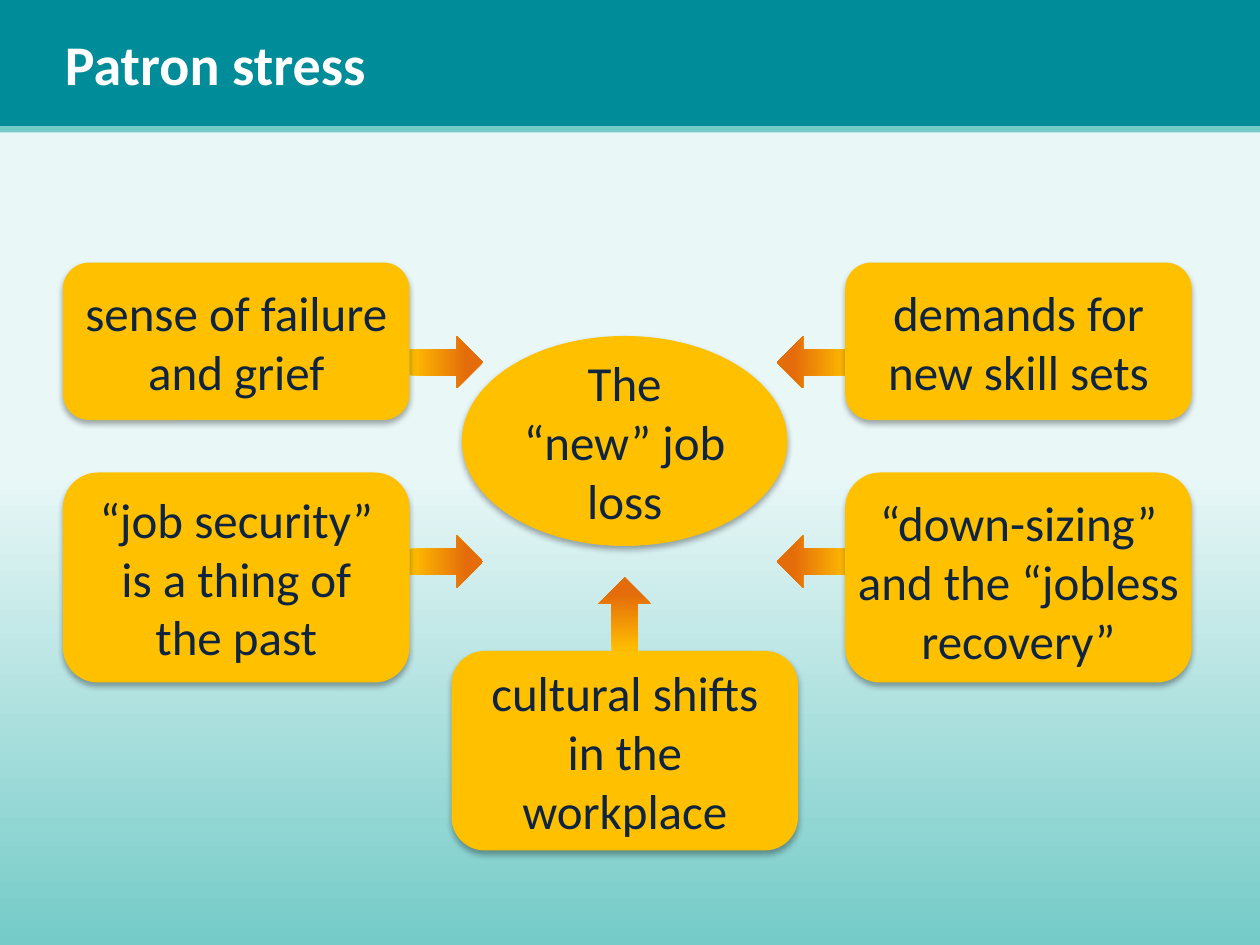
import pptx
import pptx.util
import pptx.dml.color
import pptx.enum.shapes
import pptx.enum.text
import pptx.oxml
import pptx.oxml.ns
from dataclasses import dataclass

PX = 7620  # EMU in one px, 120 px to the inch
SHAPES = pptx.enum.shapes.MSO_SHAPE
ALIGN = pptx.enum.text.PP_ALIGN


@dataclass(frozen=True)
class Theme:
    font: str = "Calibri"
    title_size: int = 32
    body_size: int = 28
    header: str = "008C99"
    accent: str = "74CBC8"
    pale: str = "E9F7F7"
    card: str = "FFC000"
    arrow_tip: str = "E46C0A"
    ink: str = "0F243E"
    white: str = "FFFFFF"


THEME = Theme()
DEFAULT_INSETS = (12, 6, 12, 6)


def rgb(color):
    return pptx.dml.color.RGBColor.from_string(color)


def set_gradient(fill, stops, angle):
    fill.gradient()
    fill.gradient_angle = angle
    for stop, (position, color) in zip(fill.gradient_stops, stops):
        stop.position = position
        stop.color.rgb = rgb(color)


def add_block(slide, kind, box, color=None):
    block = slide.shapes.add_shape(kind, *(length * PX for length in box))
    block.shadow.inherit = False
    block.line.fill.background()
    if color:
        block.fill.solid()
        block.fill.fore_color.rgb = rgb(color)
    return block


def add_soft_shadow(block):
    effects = block._element.spPr.find(pptx.oxml.ns.qn("a:effectLst"))
    effects.append(pptx.oxml.parse_xml(
        f'<a:outerShdw {pptx.oxml.ns.nsdecls("a")} blurRad="44450" dist="27940" '
        'dir="5400000" rotWithShape="0"><a:srgbClr val="000000">'
        '<a:alpha val="32000"/></a:srgbClr></a:outerShdw>'))


def write(shape, text, size=THEME.body_size, color=THEME.ink, bold=False,
          align=ALIGN.CENTER, insets=DEFAULT_INSETS):
    frame = shape.text_frame
    frame.word_wrap = True
    frame.vertical_anchor = pptx.enum.text.MSO_ANCHOR.MIDDLE
    (frame.margin_left, frame.margin_top,
     frame.margin_right, frame.margin_bottom) = (inset * PX for inset in insets)
    paragraph = frame.paragraphs[0]
    paragraph.alignment = align
    run = paragraph.add_run()
    run.text = text
    run.font.name = THEME.font
    run.font.size = pptx.util.Pt(size)
    run.font.bold = bold
    run.font.color.rgb = rgb(color)


def add_header(slide, box, title):
    left, top, width, height = box
    add_block(slide, SHAPES.RECTANGLE, box, THEME.header)
    add_block(slide, SHAPES.RECTANGLE, (left, top + height, width, 6), THEME.accent)
    heading = slide.shapes.add_textbox(
        *(length * PX for length in (left + 50, top + 10, 1080, height - 20)))
    write(heading, title, size=THEME.title_size, color=THEME.white,
          bold=True, align=ALIGN.LEFT)


def add_arrow(slide, left, top, rotation=0, flipped=False):
    arrow = add_block(slide, SHAPES.RIGHT_ARROW, (left, top, 70, 50))
    set_gradient(arrow.fill, ((0, THEME.card), (0.78, THEME.arrow_tip)), 0)
    arrow.rotation = rotation
    if flipped:
        arrow._element.spPr.xfrm.set("flipH", "1")


def add_card(slide, kind, box, text, insets=DEFAULT_INSETS):
    card = add_block(slide, kind, box, THEME.card)
    add_soft_shadow(card)
    write(card, text, insets=insets)


def add_causes(slide, box):
    left, top, width, height = box
    card_width = 330
    right = left + width - card_width
    lower = top + 200

    # Arrows from the causes to the centre
    for arrow_top in (top + 70, top + 260):
        add_arrow(slide, left + card_width, arrow_top)
        add_arrow(slide, right - 65, arrow_top, flipped=True)
    add_arrow(slide, left + 500, top + 310, rotation=270)

    # Central effect
    add_card(slide, SHAPES.OVAL, (left + 380, top + 70, 310, 200), "The “new” job loss")

    # Causes around it
    causes = (
        (left, top, 150, "sense of failure and grief", DEFAULT_INSETS),
        (right, top, 150, "demands for new skill sets", DEFAULT_INSETS),
        (left, lower, 200, "“job security” is a thing of the past", DEFAULT_INSETS),
        (right, lower, 200, "“down-sizing” and the “jobless recovery”", (0, 6, 0, 0)),
        (left + 370, top + height - 190, 190, "cultural shifts in the workplace",
         DEFAULT_INSETS),
    )
    for card_left, card_top, card_height, text, insets in causes:
        add_card(slide, SHAPES.ROUNDED_RECTANGLE,
                 (card_left, card_top, card_width, card_height), text, insets)


def main():
    deck = pptx.Presentation()
    deck.slide_width, deck.slide_height = 1200 * PX, 900 * PX
    slide = deck.slides.add_slide(deck.slide_layouts[6])
    set_gradient(slide.background.fill, ((0, THEME.accent), (0.5, THEME.pale)), 90)
    add_header(slide, (0, 0, 1200, 120), "Patron stress")
    add_causes(slide, (60, 250, 1075, 560))
    deck.save("out.pptx")


if __name__ == "__main__":
    main()
